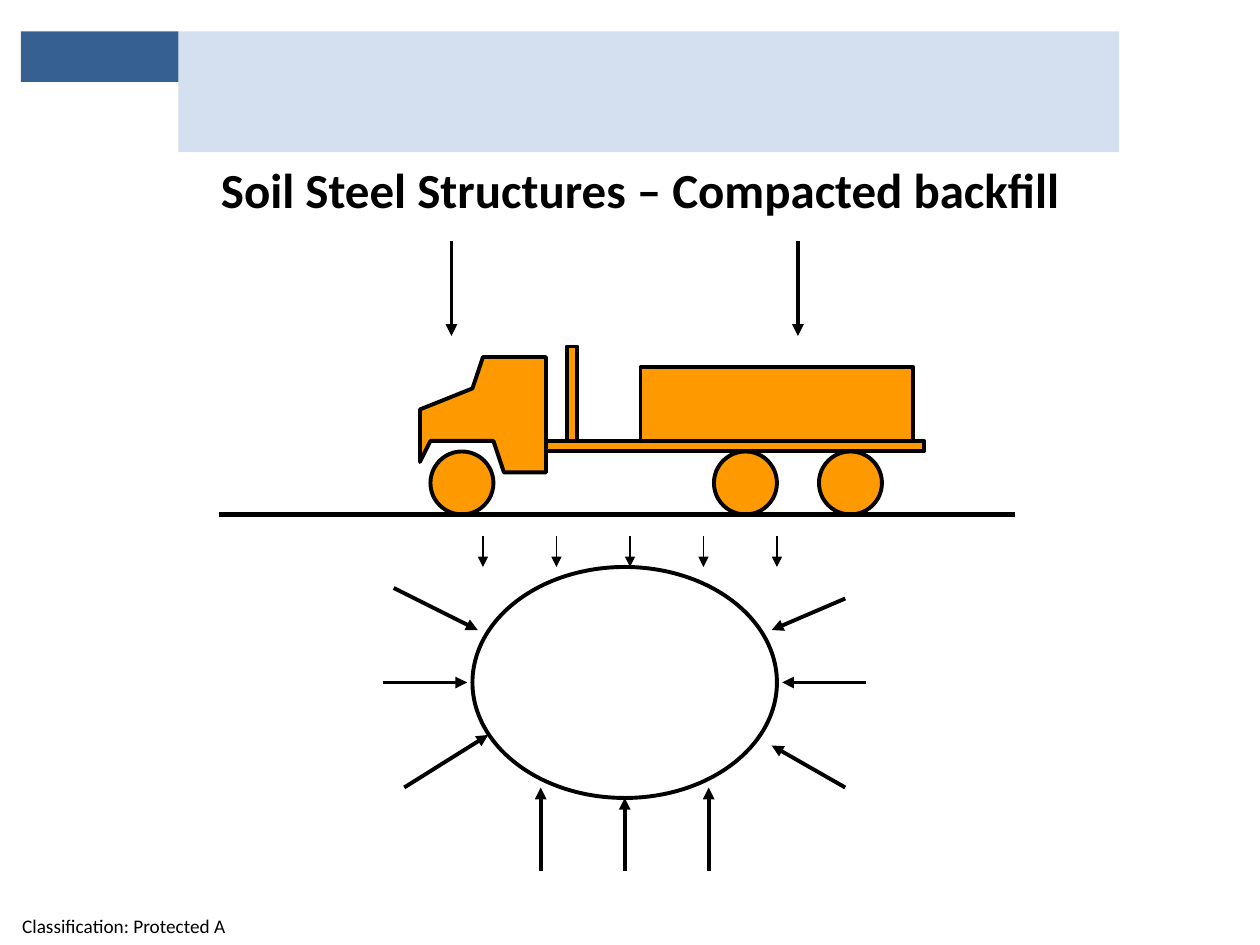
from lxml.etree import SubElement
from pptx import Presentation
from pptx.dml.color import RGBColor
from pptx.enum.shapes import MSO_CONNECTOR, MSO_SHAPE
from pptx.enum.text import MSO_ANCHOR as ANCHOR, MSO_AUTO_SIZE as AUTO, PP_ALIGN as ALIGN
from pptx.oxml.ns import qn
from pptx.util import Cm, Pt

BLACK = RGBColor(0x00, 0x00, 0x00)
ORANGE = RGBColor(0xFF, 0x99, 0x00)
NAVY = RGBColor(0x37, 0x60, 0x92)
BLUE = RGBColor(0x4F, 0x81, 0xBD)

RECT, OVAL = MSO_SHAPE.RECTANGLE, MSO_SHAPE.OVAL
GRID = 2.54 / 12  # the drawing sits on a grid of twelve units to the inch
OUTLINE = 2.25

CAB = [(52, 45), (52, 34), (46, 34), (45, 37), (40, 39),
       (40, 44), (41, 42), (47, 42), (48, 45)]
TRUCK_PARTS = [(52, 42, 36, 1), (61, 35, 26, 7), (54, 33, 1, 9)]
WHEEL_LEFTS = [78, 68, 41]
SOIL_PRESSURE = [
    (37.5, 56, 45.5, 60), (80.5, 57, 73.5, 60),
    (36.5, 65, 44.5, 65), (82.5, 65, 74.5, 65),
    (38.5, 75, 46.5, 70), (80.5, 75, 73.5, 71),
    (67.5, 83, 67.5, 75), (59.5, 83, 59.5, 76), (51.5, 83, 51.5, 75),
]


def grid(*units):
    return [Cm(n * GRID) for n in units]


def style(sp, fill=None, line=None):
    sp.shadow.inherit = False
    if fill is None:
        sp.fill.background()
    else:
        sp.fill.solid()
        sp.fill.fore_color.rgb = fill
    if line is None:
        sp.line.fill.background()
    else:
        sp.line.color.rgb = line
        sp.line.width = Pt(OUTLINE)


def add_box(s, kind, box, fill=None, line=None):
    sp = s.shapes.add_shape(kind, *grid(*box))
    style(sp, fill, line)
    return sp


def add_line(s, ends, width=OUTLINE, arrow=True):
    cn = s.shapes.add_connector(MSO_CONNECTOR.STRAIGHT, *grid(*ends))
    cn.line.color.rgb = BLACK
    cn.line.width = Pt(width)
    if arrow:
        SubElement(cn.line._get_or_add_ln(), qn("a:tailEnd"), type="triangle")
    SubElement(cn._element.spPr, qn("a:effectLst"))


def set_text(sp, text, size, bold=False):
    tf = sp.text_frame
    tf.text = text
    tf.word_wrap = False
    tf.auto_size = AUTO.SHAPE_TO_FIT_TEXT
    tf.vertical_anchor = ANCHOR.MIDDLE
    p = tf.paragraphs[0]
    p.alignment = ALIGN.CENTER
    font = p.runs[0].font
    font.name, font.size, font.bold = "Calibri", Pt(size), bold
    font.color.rgb = BLACK


def add_header(s):
    add_box(s, RECT, (2, 3, 15, 4.8), NAVY)
    band = add_box(s, RECT, (17, 3, 89.6, 11.5), BLUE)
    color = band._element.spPr.find(qn("a:solidFill"))[0]
    SubElement(color, qn("a:alpha"), val="24000")


def add_title(s):
    title = s.shapes.title
    title.left, title.top, title.width, title.height = grid(19.3, 14.5, 83.3, 6.9)
    set_text(title, "Soil Steel Structures – Compacted backfill", 28, bold=True)


def add_classification(s):
    sp = s.shapes.add_textbox(*grid(0, 86.3, 23.6, 3.7))
    set_text(sp, "Classification: Protected A", 11)
    tf = sp.text_frame
    tf.margin_left = tf.margin_right = tf.margin_top = tf.margin_bottom = 0


def add_truck(s):
    for part in TRUCK_PARTS:
        add_box(s, RECT, part, ORANGE, BLACK)
    builder = s.shapes.build_freeform(*CAB[0], scale=Cm(GRID))
    builder.add_line_segments(CAB[1:], close=True)
    style(builder.convert_to_shape(), ORANGE, BLACK)
    for left in WHEEL_LEFTS:
        add_box(s, OVAL, (left, 43, 6, 6), ORANGE, BLACK)


def add_loads(s):
    """Axle loads above the truck and the load spread below the road."""
    for x in (76, 43):
        add_line(s, (x, 23, x, 32))
    for x in range(46, 75, 7):
        add_line(s, (x, 51, x, 54), width=1)


def add_culvert(s):
    add_line(s, (20.9, 49, 96.7, 49), width=3, arrow=False)
    add_box(s, OVAL, (45, 54, 29, 22), line=BLACK)
    for ends in SOIL_PRESSURE:
        add_line(s, ends)


def main():
    prs = Presentation()
    prs.slide_width, prs.slide_height = Cm(25.4), Cm(19.05)
    s = prs.slides.add_slide(prs.slide_layouts[5])
    add_header(s)
    add_classification(s)
    add_truck(s)
    add_loads(s)
    add_culvert(s)
    add_title(s)
    prs.save("out.pptx")


if __name__ == "__main__":
    main()
